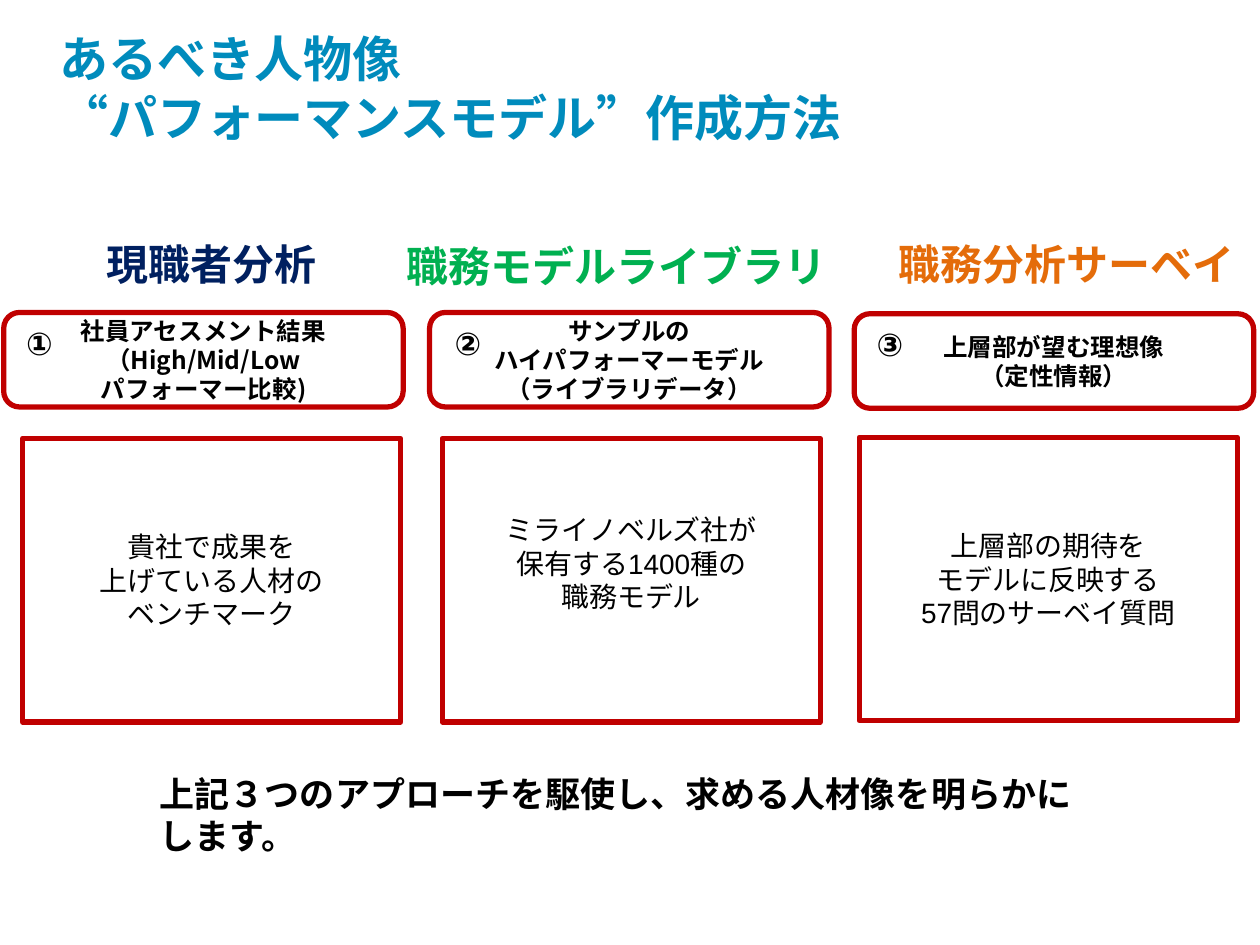
from pptx import Presentation
from pptx.dml.color import RGBColor
from pptx.enum.shapes import MSO_SHAPE
from pptx.enum.text import MSO_ANCHOR, MSO_AUTO_SIZE, PP_ALIGN
from pptx.util import Inches, Pt

BLACK = RGBColor(0x00, 0x00, 0x00)
WHITE = RGBColor(0xFF, 0xFF, 0xFF)
RED = RGBColor(0xC0, 0x00, 0x00)
TITLE_BLUE = RGBColor(0x00, 0x8B, 0xBC)
NAVY = RGBColor(0x00, 0x20, 0x60)
GREEN = RGBColor(0x00, 0xB0, 0x50)
ORANGE = RGBColor(0xE4, 0x6C, 0x0A)

BODY_FONT = "Arial"
STRONG_FONT = "Noto Sans CJK JP"
COLUMNS, ROWS = 100, 75


class SlideBuilder:
    """Places elements on a grid of COLUMNS by ROWS cells."""

    def __init__(self, presentation):
        self.cell_width = presentation.slide_width / COLUMNS
        self.cell_height = presentation.slide_height / ROWS
        self.slide = presentation.slides.add_slide(presentation.slide_layouts[5])

    def area(self, column, row, width, height):
        return (int(column * self.cell_width), int(row * self.cell_height),
                int(width * self.cell_width), int(height * self.cell_height))

    def set_text(self, frame, paragraphs, size, color=BLACK, font=BODY_FONT,
                 bold=False, align=PP_ALIGN.LEFT, anchor=MSO_ANCHOR.TOP):
        frame.word_wrap = True
        frame.auto_size = MSO_AUTO_SIZE.NONE
        frame.vertical_anchor = anchor
        for index, wording in enumerate(paragraphs):
            paragraph = frame.add_paragraph() if index else frame.paragraphs[0]
            paragraph.text = wording
            paragraph.alignment = align
            paragraph.font.name = font
            paragraph.font.size = Pt(size)
            paragraph.font.bold = bold
            paragraph.font.color.rgb = color

    def title(self, area, paragraphs):
        heading = self.slide.shapes.title
        heading.left, heading.top, heading.width, heading.height = self.area(*area)
        self.set_text(heading.text_frame, paragraphs, 28, TITLE_BLUE, STRONG_FONT, True)

    def label(self, area, wording, size, **style):
        box = self.slide.shapes.add_textbox(*self.area(*area))
        self.set_text(box.text_frame, [wording], size, bold=True, **style)

    def panel(self, preset, area, paragraphs, size, fill=None, lift=0, **style):
        """Red-framed shape; lift is extra bottom margin in inches."""
        panel = self.slide.shapes.add_shape(preset, *self.area(*area))
        panel.shadow.inherit = False
        if fill is None:
            panel.fill.background()
        else:
            panel.fill.solid()
            panel.fill.fore_color.rgb = fill
        panel.line.color.rgb = RED
        panel.line.width = Pt(3)
        panel.text_frame.margin_bottom = Inches(0.05 + lift)
        self.set_text(panel.text_frame, paragraphs, size, align=PP_ALIGN.CENTER,
                      anchor=MSO_ANCHOR.MIDDLE, **style)


# heading, colour, heading area, source left/top, number, number left,
# source wording, detail left/top, detail wording, detail lift
APPROACHES = [
    ("現職者分析", NAVY, (4, 18.4, 25.6, 5.1), (0.3, 24.8), "①", 1.1,
     ["社員アセスメント結果", "（High/Mid/Low\nパフォーマー比較)"],
     (1.8, 34.8), ["貴社で成果を\n上げている人材の\nベンチマーク"], 0),
    ("職務モデルライブラリ", GREEN, (31.1, 18.6, 35.6, 5.1), (34.1, 24.8), "②", 35.1,
     ["サンプルの", "ハイパフォーマーモデル", "（ライブラリデータ）"],
     (35.1, 34.8), ["ミライノベルズ社が", "保有する1400種の", "職務モデル"], 0.27),
    ("職務分析サーベイ", ORANGE, (69.3, 18.4, 30.7, 5.1), (67.8, 24.9), "③", 68.6,
     ["上層部が望む理想像", "（定性情報）"],
     (68.2, 34.7), ["上層部の期待を", "モデルに反映する", "57問のサーベイ質問"], 0),
]


def main():
    presentation = Presentation()
    presentation.slide_width = Inches(10)
    presentation.slide_height = Inches(7.5)
    builder = SlideBuilder(presentation)

    builder.title((3.7, 1.8, 90, 12.5),
                  ["あるべき人物像", "“パフォーマンスモデル”作成方法"])
    builder.label((11.7, 60.8, 75.3, 4.4),
                  "上記３つのアプローチを駆使し、求める人材像を明らかにします。",
                  20, font=STRONG_FONT)

    for (heading, color, heading_area, source_corner, number, number_left,
         source, detail_corner, detail, lift) in APPROACHES:
        builder.panel(MSO_SHAPE.FLOWCHART_PROCESS, (*detail_corner, 30, 22.5),
                      detail, 16, fill=WHITE, lift=lift)
        builder.panel(MSO_SHAPE.ROUNDED_RECTANGLE, (*source_corner, 31.7, 7.5),
                      source, 14, font=STRONG_FONT, bold=True)
        builder.label((number_left, source_corner[1] + 0.4, 8.3, 4), number, 18)
        builder.label(heading_area, heading, 24, color=color, align=PP_ALIGN.CENTER)

    presentation.save("out.pptx")


if __name__ == "__main__":
    main()
